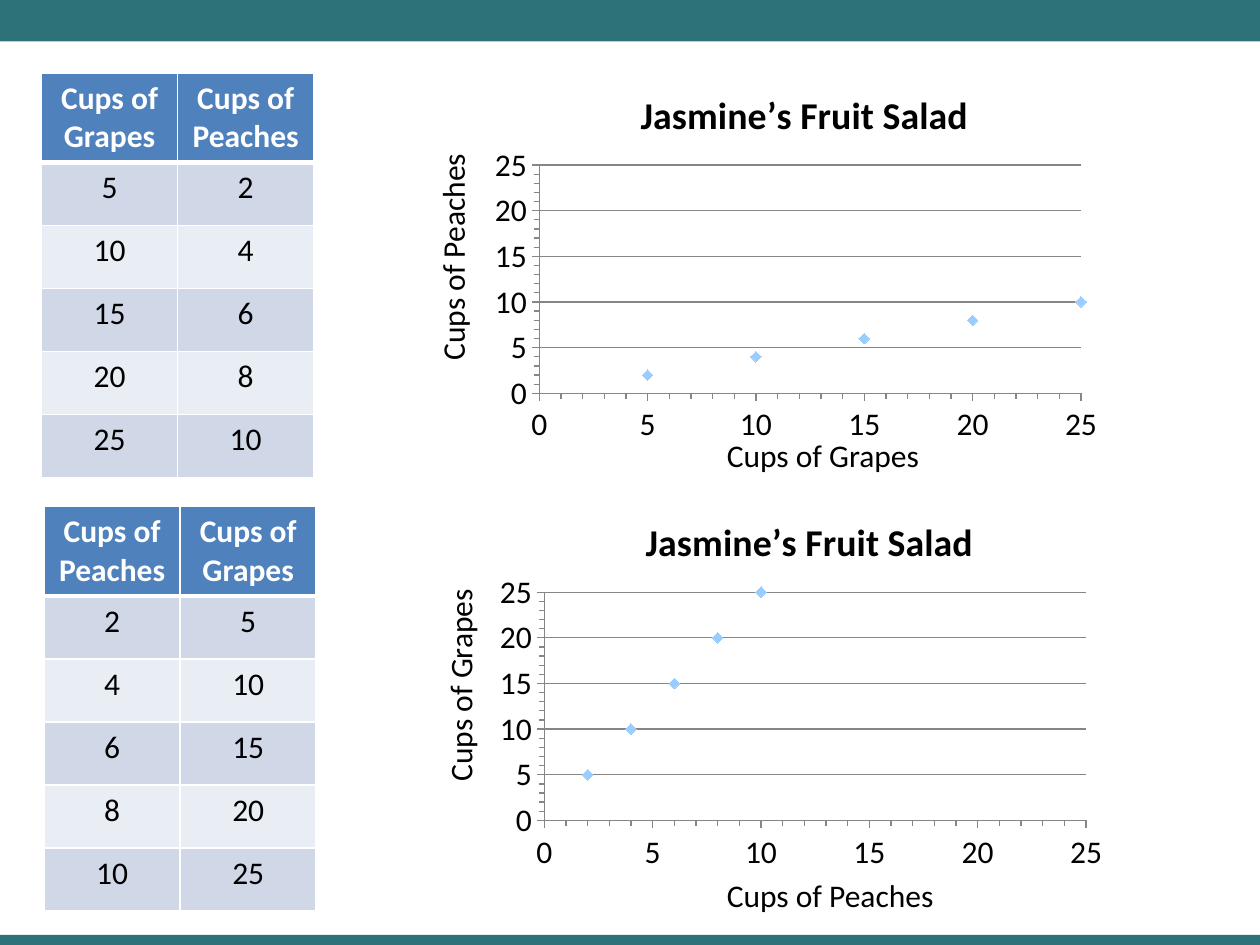
from dataclasses import dataclass

from lxml import etree
from pptx import Presentation
from pptx.chart.data import XyChartData
from pptx.dml.color import RGBColor
from pptx.enum.chart import XL_CHART_TYPE, XL_MARKER_STYLE, XL_TICK_MARK
from pptx.enum.shapes import MSO_SHAPE
from pptx.enum.text import MSO_AUTO_SIZE, PP_ALIGN
from pptx.oxml.ns import qn
from pptx.util import Inches, Pt

SCATTER = XL_CHART_TYPE.XY_SCATTER
DIAMOND = XL_MARKER_STYLE.DIAMOND
OUTSIDE = XL_TICK_MARK.OUTSIDE
RECTANGLE = MSO_SHAPE.RECTANGLE
GROW = MSO_AUTO_SIZE.SHAPE_TO_FIT_TEXT
CENTER = PP_ALIGN.CENTER


@dataclass(frozen=True)
class Theme:
    font: str = "Calibri"
    body: float = 18
    title: float = 21.6
    marker_size: int = 6
    bar: str = "2D7278"
    header: str = "4F81BD"
    bands: tuple = ("D0D8E8", "E9EDF4")
    white: str = "FFFFFF"
    black: str = "000000"
    axis: str = "868686"
    marker: str = "99CCFF"


THEME = Theme()
CHART_TITLE = "Jasmine’s Fruit Salad"
GRAPES = ("Cups of Grapes", [5, 10, 15, 20, 25])
PEACHES = ("Cups of Peaches", [2, 4, 6, 8, 10])


def rgb(value):
    return RGBColor.from_string(value)


def set_font(font, color=THEME.black, size=THEME.body, bold=False):
    values = {"name": THEME.font, "size": Pt(size), "bold": bold}
    for name, value in values.items():
        setattr(font, name, value)
    font.color.rgb = rgb(color)


def add_bar(page, top, height):
    bar = page.shapes.add_shape(RECTANGLE, 0, Inches(top), Inches(10), Inches(height))
    bar.shadow.inherit = False
    bar.fill.solid()
    bar.fill.fore_color.rgb = rgb(THEME.bar)
    bar.line.fill.background()


# Tables
def set_borders(cell, widths):
    properties = cell._tc.get_or_add_tcPr()
    for side, width in widths.items():
        line = etree.SubElement(properties, qn(f"a:ln{side}"), w=str(Pt(width)))
        fill = etree.SubElement(line, qn("a:solidFill"))
        etree.SubElement(fill, qn("a:srgbClr"), val=THEME.white)


def fill_cell(cell, text, row):
    is_header = row == 0
    set_borders(cell, {"L": 1, "R": 1, "T": 3 if row == 1 else 1, "B": 3 if is_header else 1})
    cell.fill.solid()
    cell.fill.fore_color.rgb = rgb(THEME.header if is_header else THEME.bands[(row - 1) % 2])
    para = cell.text_frame.paragraphs[0]
    para.alignment = CENTER
    span = para.add_run()
    span.text = text
    set_font(span.font, THEME.white if is_header else THEME.black, bold=is_header)


def add_ratio_table(page, left, top, first, second):
    rows = [(first[0], second[0]), *zip(first[1], second[1])]
    frame = page.shapes.add_table(len(rows), 2, Inches(left), Inches(top), Inches(2.17), Inches(3.21))
    table = frame.table
    for column in table.columns:
        column.width = Inches(1.08)
    for index, values in enumerate(rows):
        table.rows[index].height = Inches(0.5 if index else 0.64)
        for column, value in enumerate(values):
            fill_cell(table.cell(index, column), str(value), index)


# Charts
def set_layout(parent, index, values):
    for old in parent.findall(qn("c:layout")):
        parent.remove(old)
    layout = etree.Element(qn("c:layout"))
    manual = etree.SubElement(layout, qn("c:manualLayout"))
    for name, value in values.items():
        etree.SubElement(manual, qn(f"c:{name}"), val=str(value))
    parent.insert(index, layout)


def format_axis(axis, gridlines):
    values = {
        "minimum_scale": 0, "maximum_scale": 25, "major_unit": 5, "minor_unit": 1,
        "major_tick_mark": OUTSIDE, "minor_tick_mark": OUTSIDE,
        "has_major_gridlines": gridlines, "has_minor_gridlines": False,
    }
    for name, value in values.items():
        setattr(axis, name, value)
    lines = [axis.format.line]
    if gridlines:
        lines.append(axis.major_gridlines.format.line)
    for line in lines:
        line.color.rgb = rgb(THEME.axis)
        line.width = Pt(0.75)
    set_font(axis.tick_labels.font)


def add_scatter(page, left, top, across, up):
    data = XyChartData()
    points = data.add_series("Series 1")
    for x, y in zip(across[1], up[1]):
        points.add_data_point(x, y)
    frame = page.shapes.add_chart(SCATTER, Inches(left), Inches(top), Inches(5), Inches(3.18), data)
    chart = frame.chart
    set_font(chart.font)
    chart.has_legend = False
    chart.has_title = True
    para = chart.chart_title.text_frame.paragraphs[0]
    span = para.add_run()
    span.text = CHART_TITLE
    set_font(span.font, size=THEME.title, bold=True)
    set_layout(chart.chart_title._element, 1, {"xMode": "edge", "yMode": "edge", "x": 0.24, "y": 0.07})
    set_layout(chart._chartSpace.chart.plotArea, 0, {
        "layoutTarget": "inner", "xMode": "edge", "yMode": "edge",
        "x": 0.09, "y": 0.28, "w": 0.86, "h": 0.57,
    })
    format_axis(chart.category_axis, False)
    format_axis(chart.value_axis, True)
    plot = chart.plots[0]
    plot.vary_by_categories = False
    series = plot.series[0]
    series.smooth = False
    series.format.line.fill.background()
    series.marker.style = DIAMOND
    series.marker.size = THEME.marker_size
    series.marker.format.fill.solid()
    series.marker.format.fill.fore_color.rgb = rgb(THEME.marker)
    series.marker.format.line.fill.background()


def add_axis_label(page, text, left, top, vertical=False):
    width, height = (0.5, 1.88) if vertical else (1.87, 0.4)
    box = page.shapes.add_textbox(Inches(left), Inches(top), Inches(width), Inches(height))
    frame = box.text_frame
    frame.word_wrap = True
    frame.auto_size = GROW
    if vertical:
        frame._txBody.bodyPr.set("vert", "vert270")
    span = frame.paragraphs[0].add_run()
    span.text = text
    set_font(span.font)


def main():
    deck = Presentation()
    deck.slide_width, deck.slide_height = Inches(10), Inches(7.5)
    page = deck.slides.add_slide(deck.slide_layouts[6])

    # Top and bottom bars
    add_bar(page, 0, 0.33)
    add_bar(page, 7.42, 0.08)

    # Ratio tables
    add_ratio_table(page, 0.33, 0.58, GRAPES, PEACHES)
    add_ratio_table(page, 0.35, 4.02, PEACHES, GRAPES)

    # Scatter charts with their axis labels
    add_scatter(page, 3.83, 0.42, GRAPES, PEACHES)
    add_axis_label(page, PEACHES[0], 3.39, 1.08, vertical=True)
    add_axis_label(page, GRAPES[0], 5.67, 3.41)
    add_scatter(page, 3.87, 3.81, PEACHES, GRAPES)
    add_axis_label(page, GRAPES[0], 3.45, 4.42, vertical=True)
    add_axis_label(page, PEACHES[0], 5.67, 6.9)

    deck.save("out.pptx")


if __name__ == "__main__":
    main()
